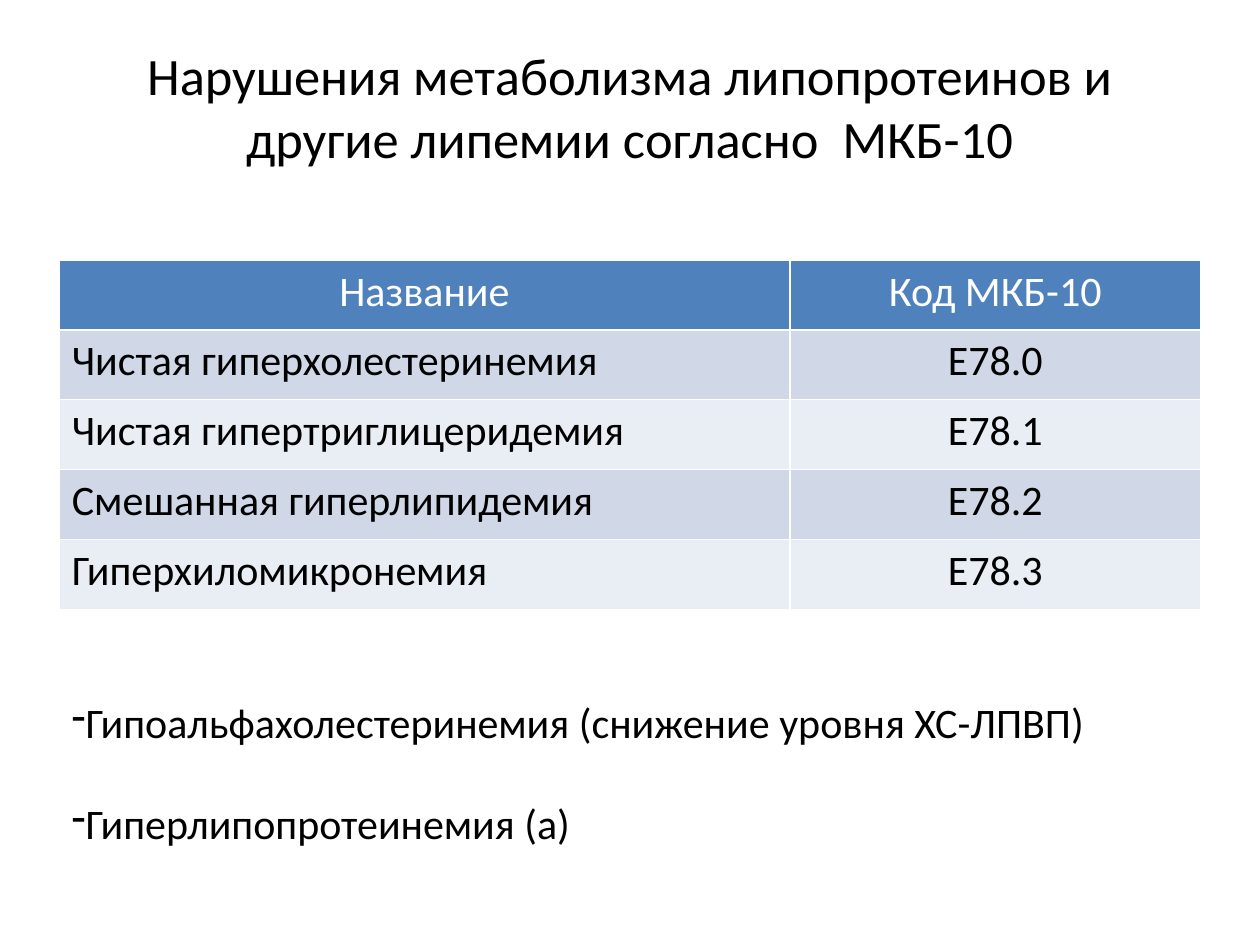
from lxml.etree import SubElement
from pptx import Presentation
from pptx.dml.color import RGBColor
from pptx.enum.text import MSO_ANCHOR, MSO_AUTO_SIZE, PP_ALIGN as Align
from pptx.oxml.ns import qn
from pptx.util import Inches, Pt

WIDTH, HEIGHT = 10, 7.5
FONT = "Calibri"
BLACK, WHITE = "000000", "FFFFFF"
HEADER_FILL = "4F81BD"
BAND_FILLS = ("E9EDF4", "D0D8E8")

TITLE = "Нарушения метаболизма липопротеинов и другие липемии согласно  МКБ-10"
CODES = [
    ("Название", "Код МКБ-10"),
    ("Чистая гиперхолестеринемия", "Е78.0"),
    ("Чистая гипертриглицеридемия", "Е78.1"),
    ("Смешанная гиперлипидемия", "Е78.2"),
    ("Гиперхиломикронемия", "Е78.3"),
]
OTHER_DISORDERS = [
    "Гипоальфахолестеринемия (снижение уровня ХС-ЛПВП)",
    "Гиперлипопротеинемия (а)",
]


def color(value):
    return RGBColor.from_string(value)


def share(left, top, width, height):
    """Turn shares of the slide's size into lengths."""
    return (Inches(left * WIDTH), Inches(top * HEIGHT),
            Inches(width * WIDTH), Inches(height * HEIGHT))


def write(para, text, size, ink=BLACK, align=Align.LEFT):
    para.alignment = align
    span = para.add_run()
    span.text = text
    span.font.name = FONT
    span.font.size = Pt(size)
    span.font.bold = False
    span.font.color.rgb = color(ink)


def place_title(page, box):
    title = page.shapes.title
    title.left, title.top, title.width, title.height = box
    frame = title.text_frame
    frame.auto_size = MSO_AUTO_SIZE.SHAPE_TO_FIT_TEXT
    frame.vertical_anchor = MSO_ANCHOR.TOP
    write(frame.paragraphs[0], TITLE, 30, align=Align.CENTER)


def place_codes(page, box, name_share):
    """Add the table; name_share is the first column's part of its width."""
    left, top, width, height = box
    table = page.shapes.add_table(len(CODES), 2, *box).table
    table.columns[0].width = int(width * name_share)
    table.columns[1].width = width - table.columns[0].width
    for r, texts in enumerate(CODES):
        table.rows[r].height = height // len(CODES)
        for c, text in enumerate(texts):
            header = r == 0
            cell = table.cell(r, c)
            cell.fill.solid()
            cell.fill.fore_color.rgb = color(HEADER_FILL if header else BAND_FILLS[r % 2])
            write(cell.text_frame.paragraphs[0], text, 24,
                  WHITE if header else BLACK,
                  Align.CENTER if header or c else Align.LEFT)


def place_disorders(page, box):
    frame = page.shapes.add_textbox(*box).text_frame
    frame.word_wrap = True
    frame.auto_size = MSO_AUTO_SIZE.SHAPE_TO_FIT_TEXT
    for index, text in enumerate(OTHER_DISORDERS):
        para = frame.add_paragraph() if index else frame.paragraphs[0]
        if index:
            para.space_before = Pt(29)
        SubElement(para._p.get_or_add_pPr(), qn("a:buChar")).set("char", "-")
        write(para, text, 24)


def main():
    deck = Presentation()
    deck.slide_width, deck.slide_height = Inches(WIDTH), Inches(HEIGHT)
    page = deck.slides.add_slide(deck.slide_layouts[5])
    place_title(page, share(0.053, 0.039, 0.894, 0.148))
    place_codes(page, share(0.047, 0.275, 0.906, 0.37), 0.64)
    place_disorders(page, share(0.047, 0.73, 0.922, 0.175))
    deck.save("out.pptx")


if __name__ == "__main__":
    main()
